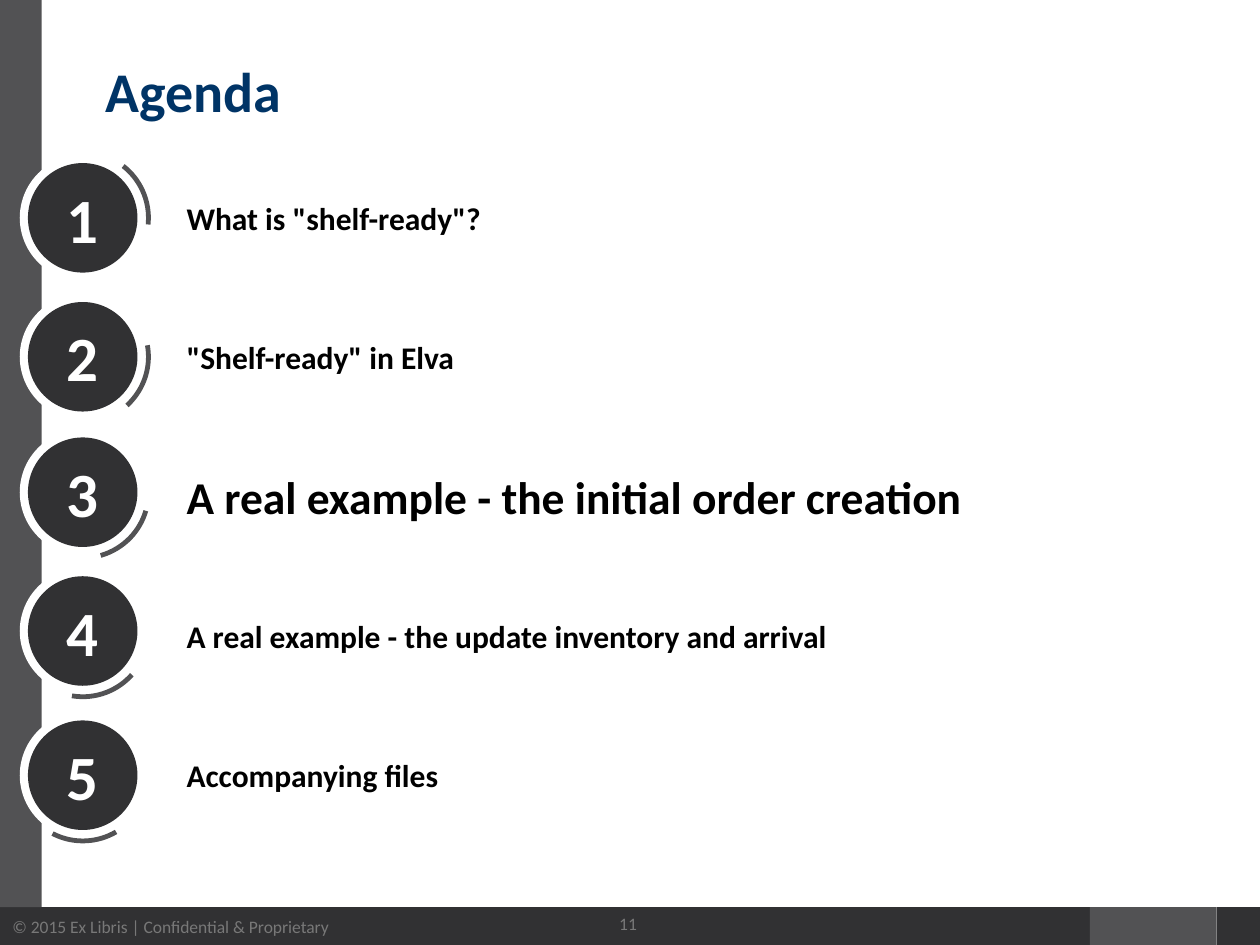
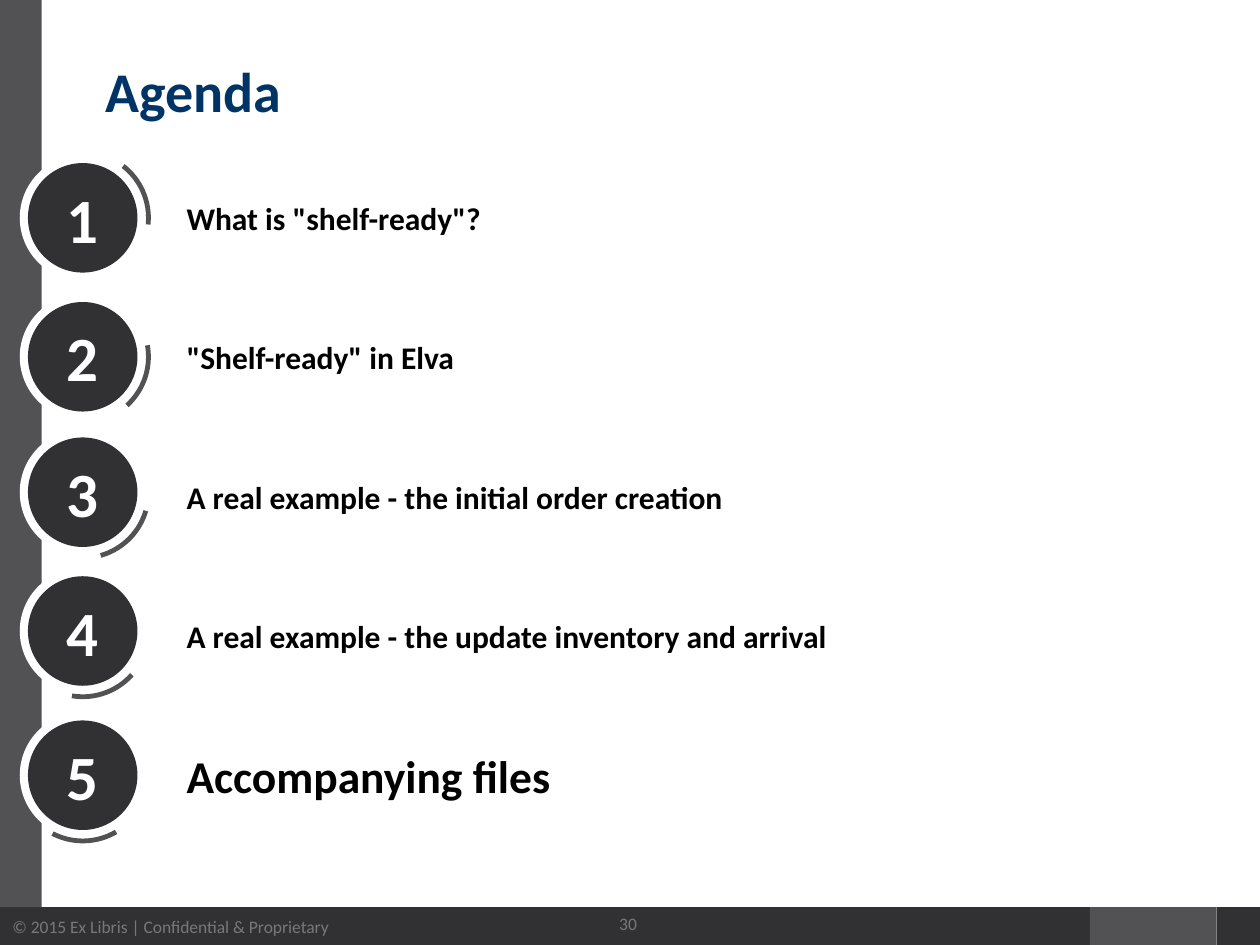
"""Build two agenda slides that each highlight the current topic."""
from pptx import Presentation
from pptx.dml.color import RGBColor
from pptx.enum import shapes, text
from pptx.util import Pt

NAVY = RGBColor(0x00, 0x34, 0x66)
CHARCOAL = RGBColor(0x31, 0x31, 0x33)
GRAY = RGBColor(0x52, 0x52, 0x54)
MUTED = RGBColor(0x78, 0x78, 0x78)
WHITE = RGBColor(0xFF, 0xFF, 0xFF)
BLACK = RGBColor(0x00, 0x00, 0x00)

TITLE_FORMAT = {"size": Pt(32), "bold": True}
NUMBER_FORMAT = {"size": Pt(36), "bold": True}
TOPIC_FORMAT = {"size": Pt(18), "bold": True}
CURRENT_FORMAT = {"size": Pt(26), "bold": True}
FOOTER_FORMAT = {"size": Pt(10), "bold": False}

SLIDE_WIDTH, SLIDE_HEIGHT = 720, 540
FOOTER_TOP = 518.4
FOOTER_HEIGHT = SLIDE_HEIGHT - FOOTER_TOP
ACCENT_LEFT, ACCENT_RIGHT = 622.8, 695.3
BADGE_X = 47.3
RING_SIZE, ARC_SIZE, DISC_SIZE = 72, 77.8, 62.6
ARC_ADJUSTMENTS = (181.725, 0.424, 0.035)
FIRST_TOPIC_Y, TOPIC_STEP, TOPIC_HEIGHT = 124.6, 79.6, 50.4

TOPICS = [
    ('What is "shelf-ready"?', 124.5, 5.1),
    ('"Shelf-ready" in Elva', 203.9, 47),
    ("A real example - the initial order creation", 281.3, 73.5),
    ("A real example - the update inventory and arrival", 360.6, 98.8),
    ("Accompanying files", 443, 116.7),
]
AGENDAS = [("11", 3), ("30", 5)]


def write(shape, words, color, formats, align=text.PP_ALIGN.LEFT,
          anchor=text.MSO_ANCHOR.MIDDLE):
    """Put one formatted paragraph into a shape and return it."""
    frame = shape.text_frame
    frame.word_wrap = True
    frame.vertical_anchor = anchor
    paragraph = frame.paragraphs[0]
    paragraph.text = words
    paragraph.alignment = align
    paragraph.font.name = "Calibri"
    paragraph.font.color.rgb = color
    for name, value in formats.items():
        setattr(paragraph.font, name, value)
    return paragraph


def add_filled(parent, kind, left, top, width, height, color):
    """Add a flat preset shape without outline or shadow."""
    shape = parent.shapes.add_shape(kind, Pt(left), Pt(top), Pt(width), Pt(height))
    shape.shadow.inherit = False
    shape.fill.solid()
    shape.fill.fore_color.rgb = color
    shape.line.fill.background()
    return shape


def add_round(parent, kind, center_y, size, color):
    """Add a round shape centred on the badge column."""
    return add_filled(parent, kind, BADGE_X - size / 2, center_y - size / 2,
                      size, size, color)


def add_badge(slide, number, center_y, rotation):
    """Add a grouped number disc with its white ring and turned arc."""
    group = slide.shapes.add_group_shape()
    oval = shapes.MSO_SHAPE.OVAL
    add_round(group, oval, center_y, RING_SIZE, WHITE)
    arc = add_round(group, shapes.MSO_SHAPE.BLOCK_ARC, center_y, ARC_SIZE, GRAY)
    for index, value in enumerate(ARC_ADJUSTMENTS):
        arc.adjustments[index] = value
    arc.rotation = rotation
    disc = add_round(group, oval, center_y, DISC_SIZE, CHARCOAL)
    write(disc, str(number), WHITE, NUMBER_FORMAT, text.PP_ALIGN.CENTER)


def add_topic(slide, words, center_y, is_current):
    """Add a topic label, larger and wider when it is current."""
    box = slide.shapes.add_textbox(Pt(103), Pt(center_y - TOPIC_HEIGHT / 2),
                                   Pt(561.6 if is_current else 437), Pt(TOPIC_HEIGHT))
    for side in ("left", "top", "right", "bottom"):
        setattr(box.text_frame, f"margin_{side}", Pt(3.6))
    write(box, words, BLACK, CURRENT_FORMAT if is_current else TOPIC_FORMAT)


def add_frame(slide, page):
    """Add the side band, the footer bands and the page number."""
    rectangle = shapes.MSO_SHAPE.RECTANGLE
    edges = (0, ACCENT_LEFT, ACCENT_RIGHT, SLIDE_WIDTH)
    colors = (CHARCOAL, GRAY, CHARCOAL)
    bands = [add_filled(slide, rectangle, left, FOOTER_TOP, right - left,
                        FOOTER_HEIGHT, color)
             for left, right, color in zip(edges, edges[1:], colors)]
    write(bands[0], "© 2015 Ex Libris | Confidential & Proprietary", MUTED, FOOTER_FORMAT)
    add_filled(slide, rectangle, 0, 0, 23.8, FOOTER_TOP, GRAY)
    box = slide.shapes.add_textbox(Pt(316.8), Pt(515.7), Pt(84.2), Pt(28 - 4))
    write(box, page, MUTED, FOOTER_FORMAT, text.PP_ALIGN.CENTER)


def set_title(slide, words):
    """Place and format the title placeholder."""
    title = slide.shapes.title
    title.left, title.top, title.width, title.height = map(Pt, (53.3, 33.1, 612, 85.7))
    paragraph = write(title, words, NAVY, TITLE_FORMAT, anchor=text.MSO_ANCHOR.TOP)
    paragraph.line_spacing = 0.9


def add_agenda(presentation, page, current):
    """Add one agenda slide with the current topic enlarged."""
    slide = presentation.slides.add_slide(presentation.slide_layouts[5])
    add_frame(slide, page)
    set_title(slide, "Agenda")
    for number, (words, badge_y, rotation) in enumerate(TOPICS, 1):
        add_badge(slide, number, badge_y, rotation)
        topic_y = FIRST_TOPIC_Y + (number - 1) * TOPIC_STEP
        add_topic(slide, words, topic_y, number == current)


def main():
    """Create the presentation and save it."""
    presentation = Presentation()
    presentation.slide_width = Pt(SLIDE_WIDTH)
    presentation.slide_height = Pt(SLIDE_HEIGHT)
    for page, current in AGENDAS:
        add_agenda(presentation, page, current)
    presentation.save("out.pptx")


if __name__ == "__main__":
    main()
